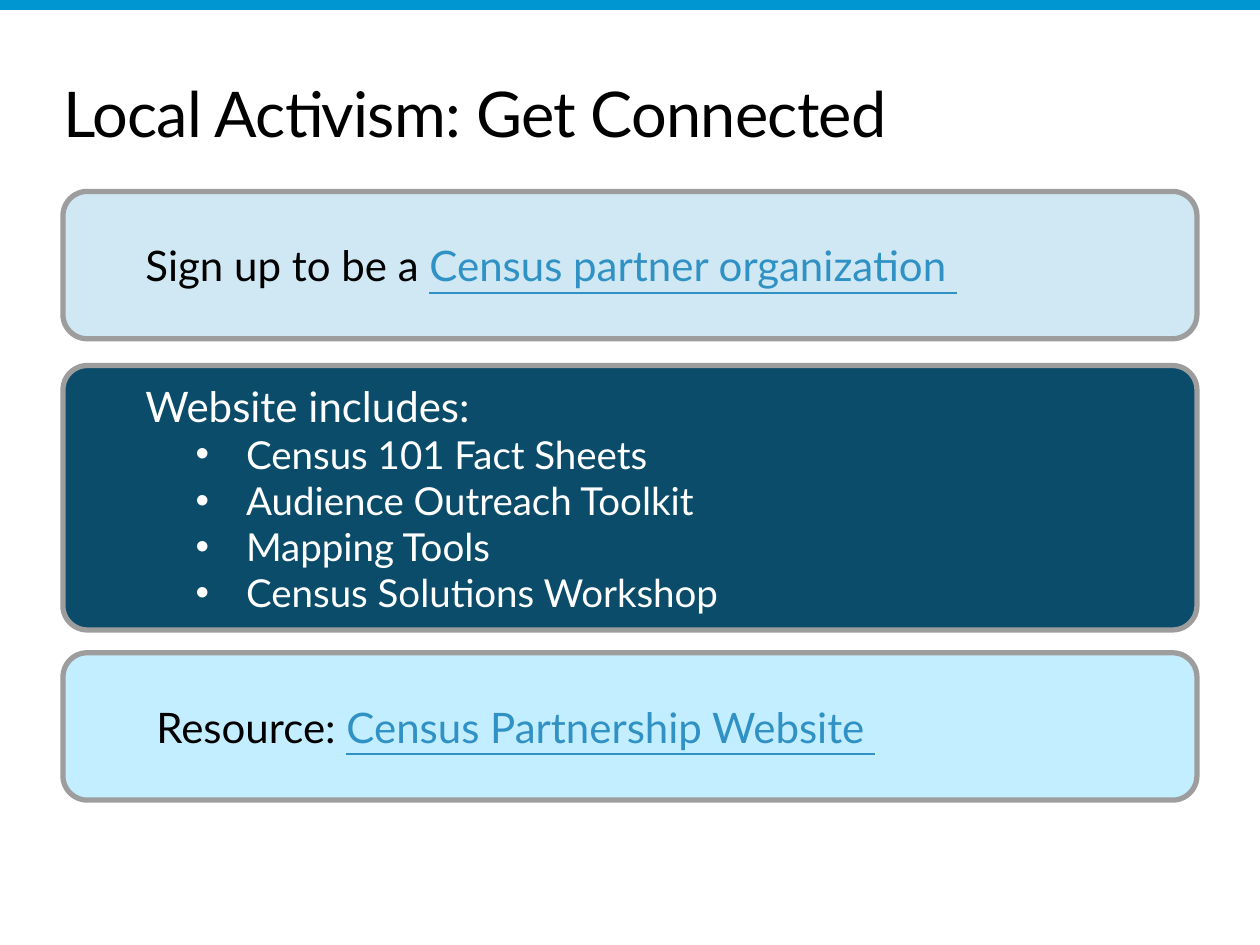
from lxml.etree import SubElement
from pptx import Presentation
from pptx.dml.color import RGBColor
from pptx.enum.shapes import MSO_SHAPE as Preset
from pptx.enum.text import MSO_ANCHOR as Anchor, MSO_AUTO_SIZE as AutoSize, PP_ALIGN as Align
from pptx.oxml.ns import qn
from pptx.util import Cm, Pt

COLORS = {
    "bar": "0096D2",
    "black": "000000",
    "white": "FFFFFF",
    "link": "3091C4",
    "border": "9D9D9D",
    "signup": "CFE8F3",
    "website": "0A4C6A",
    "resource": "C3EEFF",
}
FONT = "Lato"
MARGIN, WIDTH = 1.27, 22.86
CORNER = 0.49
INDENT = 1.27


def color(name):
    return RGBColor.from_string(COLORS[name])


def place(shape, box):
    shape.left, shape.top, shape.width, shape.height = map(Cm, box)


def add_run(paragraph, text, size, ink, underline=None):
    run = paragraph.add_run()
    run.text = text
    run.font.name = FONT
    run.font.size = Pt(size)
    run.font.color.rgb = color(ink)
    run.font.underline = underline
    return run


def set_indent(paragraph, left, first=0, bullet=None):
    paragraph.alignment = Align.LEFT
    properties = paragraph._p.get_or_add_pPr()
    properties.set("marL", str(Cm(left)))
    properties.set("indent", str(Cm(first)))
    if bullet:
        SubElement(properties, qn("a:buFont"), typeface="Arial")
        SubElement(properties, qn("a:buChar"), char=bullet)


def add_top_bar(slide, box):
    bar = slide.shapes.add_shape(Preset.RECTANGLE, *map(Cm, box))
    bar.shadow.inherit = False
    bar.fill.solid()
    bar.fill.fore_color.rgb = color("bar")
    bar.line.fill.background()


def fill_title(slide, box, text):
    title = slide.shapes.title
    place(title, box)
    frame = title.text_frame
    frame.margin_left = frame.margin_top = frame.margin_right = frame.margin_bottom = 0
    frame.auto_size = AutoSize.NONE
    frame.vertical_anchor = Anchor.MIDDLE
    heading = frame.paragraphs[0]
    heading.alignment = Align.LEFT
    run = add_run(heading, text, 36, "black")
    run.font._element.set("spc", "-40")


def add_card(slide, box, fill):
    card = slide.shapes.add_shape(Preset.ROUNDED_RECTANGLE, *map(Cm, box))
    card.adjustments[0] = CORNER / box[3]
    card.shadow.inherit = False
    card.fill.solid()
    card.fill.fore_color.rgb = color(fill)
    card.line.color.rgb = color("border")
    card.line.width = Pt(3)
    card.text_frame.word_wrap = True
    card.text_frame.vertical_anchor = Anchor.MIDDLE
    return card.text_frame


def add_link_card(slide, box, fill, lead, link, indent):
    sentence = add_card(slide, box, fill).paragraphs[0]
    set_indent(sentence, indent)
    add_run(sentence, lead, 24, "black")
    add_run(sentence, link, 24, "link", underline=True)


def add_list_card(slide, box, fill, heading, items):
    frame = add_card(slide, box, fill)
    intro = frame.paragraphs[0]
    set_indent(intro, INDENT)
    add_run(intro, heading, 24, "white")
    for item in items:
        entry = frame.add_paragraph()
        set_indent(entry, 3.3, -1.02, "•")
        add_run(entry, item, 22, "white")


def main():
    deck = Presentation()
    deck.slide_width, deck.slide_height = Cm(25.4), Cm(19.05)
    slide = deck.slides.add_slide(deck.slide_layouts[5])

    add_top_bar(slide, (0, 0, 25.4, 0.2))
    fill_title(slide, (MARGIN, 1.47, WIDTH, 1.57), "Local Activism: Get Connected")
    add_link_card(slide, (MARGIN, 3.86, WIDTH, 2.97), "signup",
                  "Sign up to be a ", "Census partner organization ", INDENT)
    add_list_card(slide, (MARGIN, 7.37, WIDTH, 5.33), "website", "Website includes:",
                  ["Census 101 Fact Sheets", "Audience Outreach Toolkit",
                   "Mapping Tools", "Census Solutions Workshop"])
    add_link_card(slide, (MARGIN, 13.16, WIDTH, 2.97), "resource",
                  "Resource: ", "Census Partnership Website ", INDENT + 0.22)

    deck.save("out.pptx")


if __name__ == "__main__":
    main()
